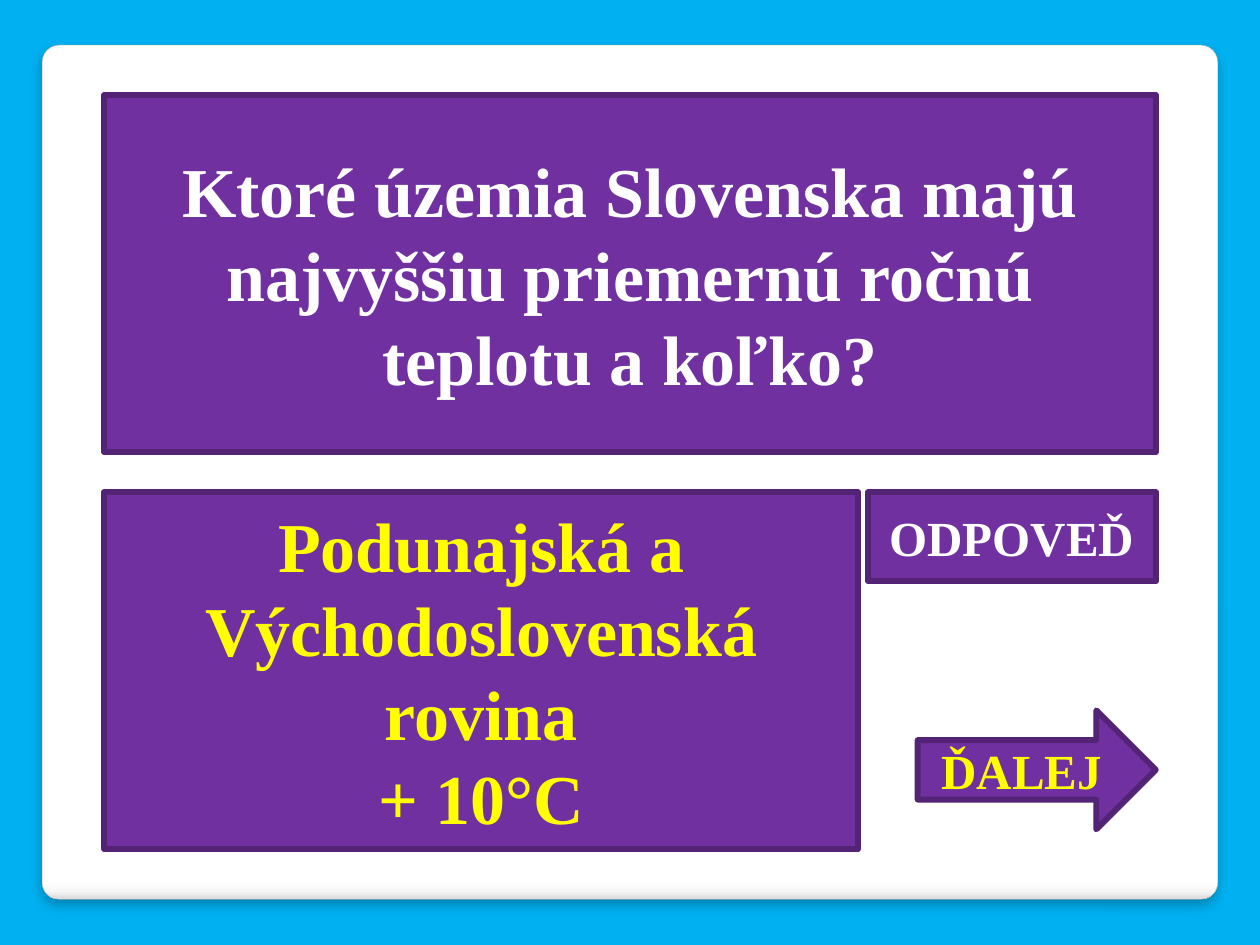
from lxml import etree
from pptx import Presentation
from pptx.dml.color import RGBColor
from pptx.enum.shapes import MSO_SHAPE
from pptx.enum.text import MSO_ANCHOR, MSO_AUTO_SIZE, PP_ALIGN
from pptx.oxml import parse_xml
from pptx.oxml.ns import nsdecls, qn
from pptx.util import Cm, Pt

RECTANGLE = MSO_SHAPE.RECTANGLE
ROUNDED = MSO_SHAPE.ROUNDED_RECTANGLE
ARROW = MSO_SHAPE.RIGHT_ARROW
MIDDLE = MSO_ANCHOR.MIDDLE
CENTER = PP_ALIGN.CENTER
NO_AUTOFIT = MSO_AUTO_SIZE.NONE
TITLE_ONLY = 5

SKY, PURPLE, DARK_PURPLE = "00B0F0", "7030A0", "532476"
WHITE, YELLOW, GRAY = "FFFFFF", "FFFF00", "A4A4A4"
PANEL_STOPS = [(0, WHITE), (98, WHITE), (99, "F7F7F7"), (100, "DADADA")]


def color(value):
    return RGBColor.from_string(value)


def write_text(shape, text, *, size, font_color, font="Times New Roman", bold=True):
    frame = shape.text_frame
    frame.text = text
    frame.word_wrap = True
    frame.auto_size = NO_AUTOFIT
    frame.vertical_anchor = MIDDLE
    for paragraph in frame.paragraphs:
        paragraph.alignment = CENTER
        for run in paragraph.runs:
            run.font.name = font
            run.font.size = Pt(size)
            run.font.bold = bold
            run.font.color.rgb = color(font_color)


class QuizSlide:
    def __init__(self, slide):
        self.slide = slide
        self.fill, self.line, self.line_width = PURPLE, DARK_PURPLE, 3.35

    def background(self, fill):
        self.slide.background.fill.solid()
        self.slide.background.fill.fore_color.rgb = color(fill)

    def panel(self, box):
        shape = self.slide.shapes.add_shape(ROUNDED, *map(Cm, box))
        shape.adjustments[0] = 0.02
        shape.line.color.rgb = color(GRAY)
        shape.line.width = Pt(0.16)
        shape.fill.gradient()
        shape.fill.gradient_angle = 270
        stops = shape._element.spPr.find(qn("a:gradFill")).find(qn("a:gsLst"))
        for stop in list(stops):
            stops.remove(stop)
        for position, value in PANEL_STOPS:
            stop = etree.SubElement(stops, qn("a:gs"), pos=str(position * 1000))
            etree.SubElement(stop, qn("a:srgbClr"), val=value)
        shape._element.spPr.append(parse_xml(
            f'<a:effectLst {nsdecls("a")}>'
            f'<a:outerShdw blurRad="{Pt(6)}" dist="{Pt(4)}" dir="5400000" rotWithShape="0">'
            '<a:srgbClr val="000000"><a:alpha val="25000"/></a:srgbClr>'
            '</a:outerShdw></a:effectLst>'))

    def style(self, shape):
        shape.fill.solid()
        shape.fill.fore_color.rgb = color(self.fill)
        shape.line.color.rgb = color(self.line)
        shape.line.width = Pt(self.line_width)
        etree.SubElement(shape._element.spPr.find(qn("a:ln")), qn("a:round"))

    def question(self, text, box):
        title = self.slide.shapes.title
        title.left, title.top, title.width, title.height = map(Cm, box)
        self.style(title)
        write_text(title, text, size=40, font_color=WHITE)
        self.slide.shapes._spTree.append(title._element)

    def block(self, kind, text, box, size, font_color):
        shape = self.slide.shapes.add_shape(kind, *map(Cm, box))
        shape.shadow.inherit = False
        self.style(shape)
        write_text(shape, text, size=size, font_color=font_color)


def main():
    presentation = Presentation()
    presentation.slide_width, presentation.slide_height = Cm(25.4), Cm(19.05)
    layout = presentation.slide_layouts[TITLE_ONLY]
    quiz = QuizSlide(presentation.slides.add_slide(layout))

    left, right, answer_top, tall = 2.1, 23.3, 9.92, 7.2
    button_width, arrow_width = 5.8, 4.8

    quiz.background(SKY)
    quiz.panel((0.85, 0.91, 23.7, 17.22))
    quiz.question("Ktoré územia Slovenska majú najvyššiu priemernú ročnú teplotu a koľko?",
                  (left, 1.92, right - left, tall))
    quiz.block(RECTANGLE, "Podunajská a Východoslovenská rovina\n+ 10°C",
               (left, answer_top, 15.2, tall), 40, YELLOW)
    quiz.block(RECTANGLE, "ODPOVEĎ",
               (right - button_width, answer_top, button_width, 1.8), 28, WHITE)
    quiz.block(ARROW, "ĎALEJ",
               (right - arrow_width, 14.32, arrow_width, 2.4), 28, YELLOW)
    presentation.save("out.pptx")


if __name__ == "__main__":
    main()
